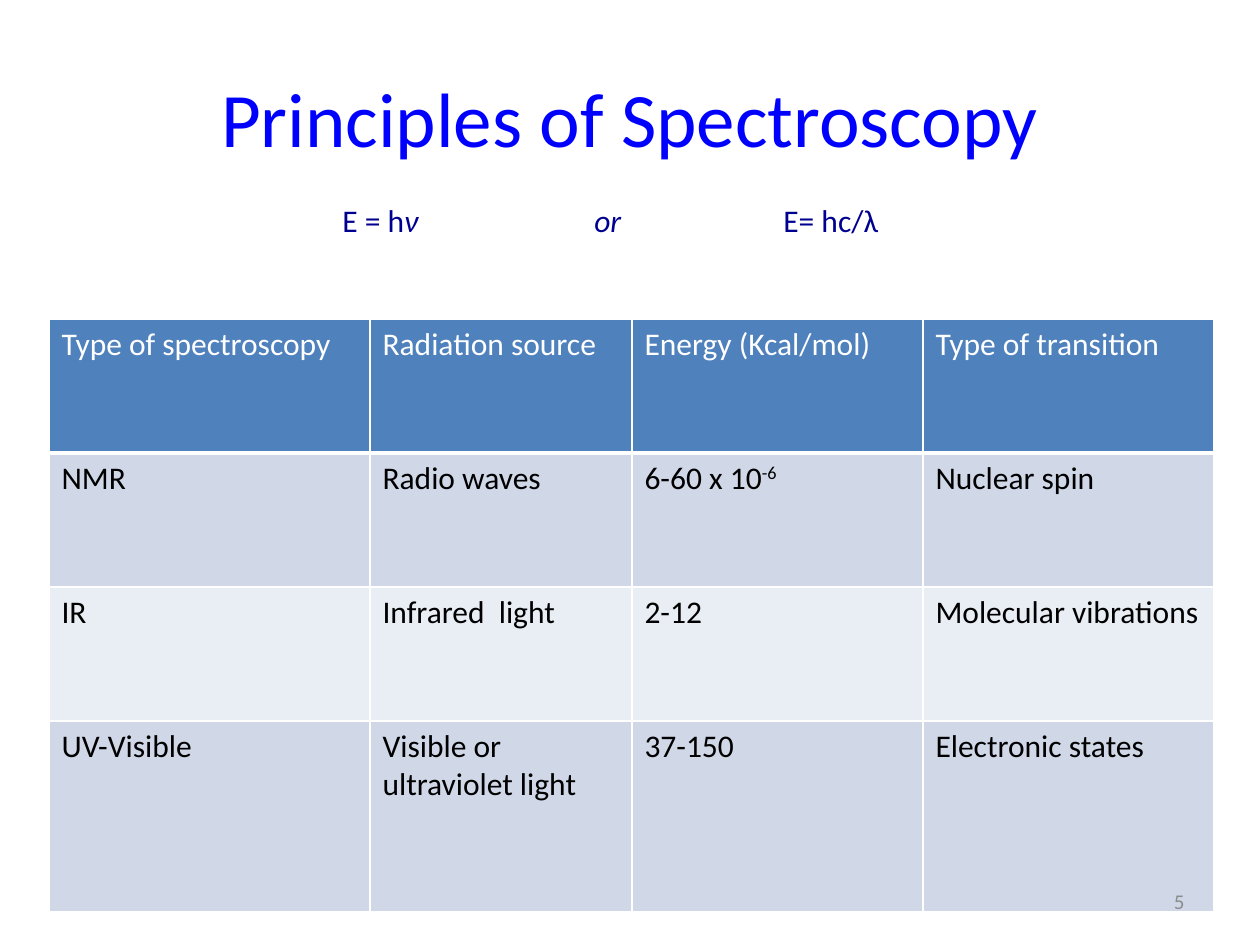
from dataclasses import dataclass

from lxml import etree
from pptx import Presentation
from pptx.dml.color import RGBColor
from pptx.enum.text import MSO_ANCHOR, PP_ALIGN
from pptx.oxml.ns import qn
from pptx.util import Emu, Pt

LEFT, CENTER, RIGHT = PP_ALIGN.LEFT, PP_ALIGN.CENTER, PP_ALIGN.RIGHT
TOP, MIDDLE = MSO_ANCHOR.TOP, MSO_ANCHOR.MIDDLE
PX_PER_INCH = 126


def px(length):
    return Emu(round(length * 914400 / PX_PER_INCH))


@dataclass(frozen=True)
class Theme:
    font: str = "Calibri"
    title: str = "0000FF"
    formula: str = "000090"
    header_text: str = "FFFFFF"
    body_text: str = "000000"
    number: str = "8C8C8C"
    header_fill: str = "4F81BD"
    bands: tuple = ("D0D8E8", "E9EDF4")
    border: str = "FFFFFF"
    title_size: int = 44
    body_size: int = 18
    number_size: int = 12


@dataclass(frozen=True)
class Span:
    text: str
    italic: bool = False
    superscript: bool = False


class SlideBuilder:
    def __init__(self, slide, theme):
        self.slide = slide
        self.theme = theme

    def fill_para(self, para, content, size, color):
        """Fill a paragraph from plain text or a list of spans."""
        spans = [Span(content)] if isinstance(content, str) else content
        for span in spans:
            run = para.add_run()
            run.text = span.text
            font = run.font
            font.name, font.size = self.theme.font, Pt(size)
            font.bold, font.italic = False, span.italic
            font.color.rgb = RGBColor.from_string(color)
            if span.superscript:
                run._r.get_or_add_rPr().set("baseline", "30000")

    def text(self, bounds, content, size, color, align=LEFT, anchor=TOP, tabs=()):
        box = self.slide.shapes.add_textbox(*map(px, bounds))
        frame = box.text_frame
        frame.word_wrap = True
        frame.vertical_anchor = anchor
        para = frame.paragraphs[0]
        para.alignment = align
        if tabs:
            stops = etree.SubElement(para._p.get_or_add_pPr(), qn("a:tabLst"))
            for stop in tabs:
                etree.SubElement(stops, qn("a:tab"), pos=str(px(stop)), algn="l")
        self.fill_para(para, content, size, color)

    def borders(self, cell, bottom):
        """Draw the four cell edges; call before setting the fill."""
        properties = cell._tc.get_or_add_tcPr()
        for edge, width in (("L", 1), ("R", 1), ("T", 1), ("B", bottom)):
            line = etree.SubElement(properties, qn(f"a:ln{edge}"), w=str(Pt(width)))
            fill = etree.SubElement(line, qn("a:solidFill"))
            etree.SubElement(fill, qn("a:srgbClr"), val=self.theme.border)

    def table(self, left, top, widths, heights, rows):
        theme = self.theme
        bounds = (left, top, sum(widths), sum(heights))
        table = self.slide.shapes.add_table(
            len(rows), len(widths), *map(px, bounds)).table
        for column, width in zip(table.columns, widths):
            column.width = px(width)
        for index, (row, height, contents) in enumerate(
                zip(table.rows, heights, rows)):
            row.height = px(height)
            header = index == 0
            fill = theme.header_fill if header else theme.bands[(index - 1) % 2]
            color = theme.header_text if header else theme.body_text
            for cell, content in zip(row.cells, contents):
                self.borders(cell, 3 if header else 1)
                cell.fill.solid()
                cell.fill.fore_color.rgb = RGBColor.from_string(fill)
                self.fill_para(cell.text_frame.paragraphs[0], content,
                               theme.body_size, color)


ROWS = [
    ["Type of spectroscopy", "Radiation source", "Energy (Kcal/mol)",
     "Type of transition"],
    ["NMR", "Radio waves",
     [Span("6-60 x 10"), Span("-6", superscript=True)], "Nuclear spin"],
    ["IR", "Infrared  light", "2-12", "Molecular vibrations"],
    ["UV-Visible", "Visible or ultraviolet light", "37-150",
     "Electronic states"],
]


def main():
    deck = Presentation()
    deck.slide_width, deck.slide_height = px(1260), px(945)
    theme = Theme()
    page = SlideBuilder(deck.slides.add_slide(deck.slide_layouts[6]), theme)

    # Title
    page.text((63, 38, 1134, 157), "Principles of Spectroscopy",
              theme.title_size, theme.title, CENTER, MIDDLE)

    # Comparison table
    page.table(49, 319, (321, 262, 291, 291), (134, 134, 134, 191), ROWS)

    # Energy formulas, spaced by tab stops
    page.text((330, 195, 631, 50),
              [Span("E = h"), Span("ν\tor\t", italic=True), Span("E= hc/λ")],
              theme.body_size, theme.formula, tabs=(252, 441))

    # Slide number
    page.text((903, 876, 294, 50), "5", theme.number_size, theme.number,
              RIGHT, MIDDLE)

    deck.save("out.pptx")


if __name__ == "__main__":
    main()
